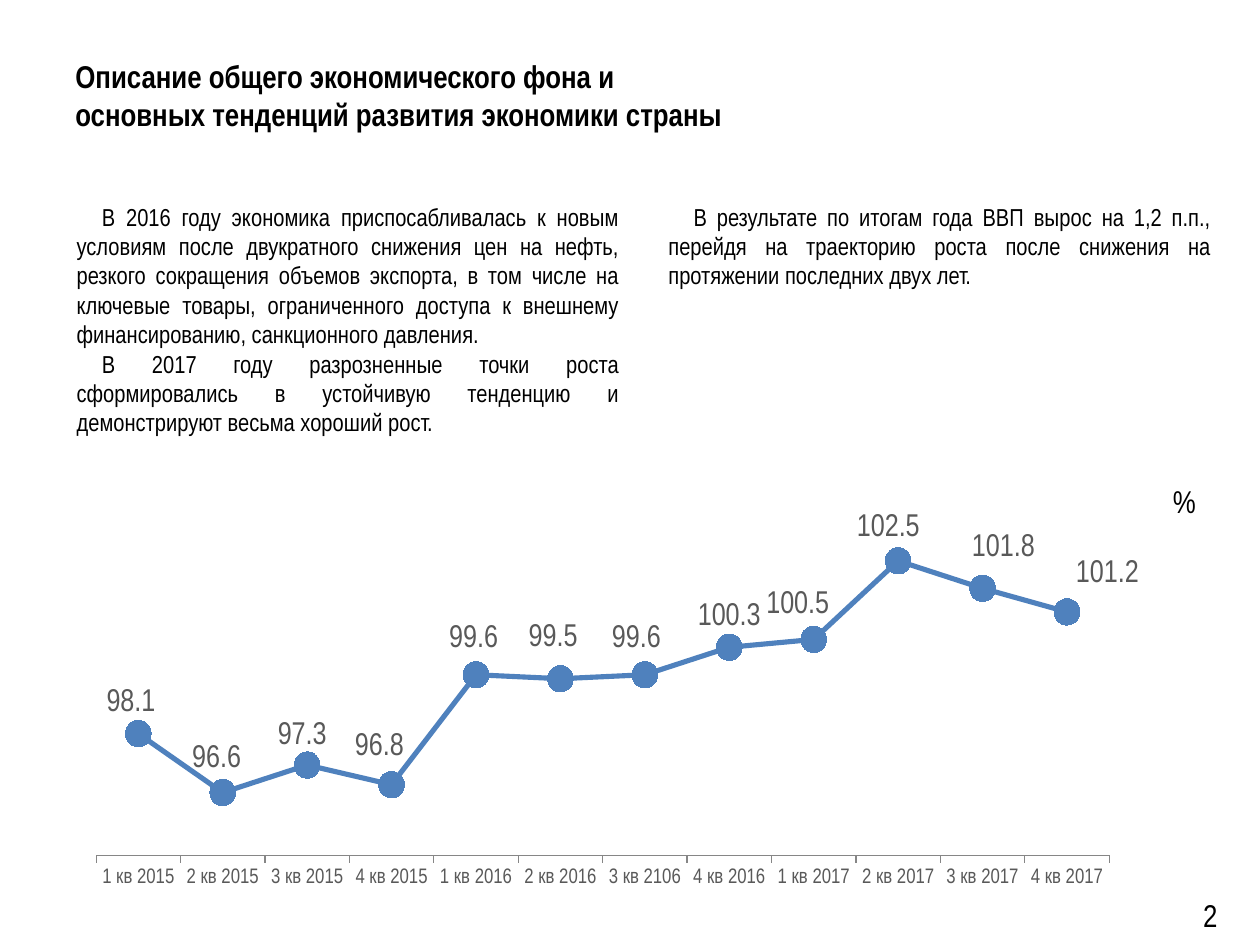
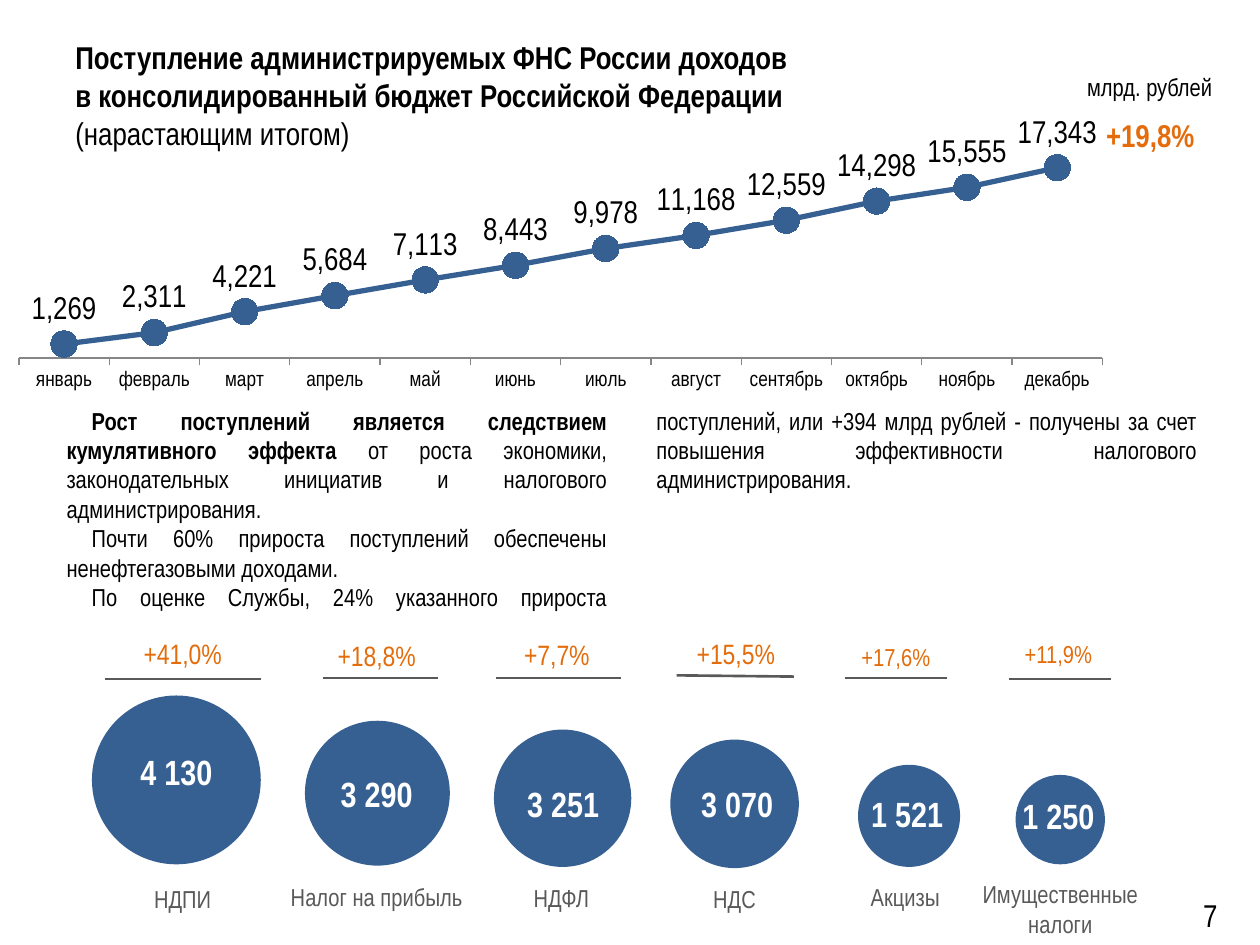
import pptx
import pptx.chart.data
import pptx.dml.color
import pptx.enum.chart
import pptx.enum.shapes
import pptx.enum.text
import pptx.oxml
import pptx.oxml.ns
import pptx.util
from lxml import etree

COLORS = {
    "ink": "000000",
    "paper": "FFFFFF",
    "muted": "595959",
    "axis": "868686",
    "sky": "4F81BD",
    "navy": "376092",
    "growth": "E46C0A",
}
ALIGN = pptx.enum.text.PP_ALIGN
ANCHOR = pptx.enum.text.MSO_ANCHOR
CHART = pptx.enum.chart
qn = pptx.oxml.ns.qn


def px(length):
    return pptx.util.Emu(round(length * 9144))


def rgb(name):
    return pptx.dml.color.RGBColor.from_string(COLORS[name])


def format_font(font, size, color, bold=False):
    font.name = Deck.font
    font.size = pptx.util.Pt(size)
    font.bold = bold
    font.color.rgb = rgb(color)


def write_text(frame, text, size=18, color="ink", bold=False, align=ALIGN.LEFT,
               indent=0, spacing=None):
    paragraphs = [text] if isinstance(text, str) else text
    for index, content in enumerate(paragraphs):
        paragraph = frame.paragraphs[0] if index == 0 else frame.add_paragraph()
        paragraph.alignment = align
        if spacing:
            paragraph.line_spacing = pptx.util.Pt(spacing)
        if indent:
            paragraph._p.get_or_add_pPr().set("indent", str(px(indent)))
        pieces = [(content, bold)] if isinstance(content, str) else content
        for words, weight in pieces:
            run = paragraph.add_run()
            run.text = words
            format_font(run.font, size, color, weight)


def manual_layout(**values):
    layout = etree.Element(qn("c:layout"))
    manual = etree.SubElement(layout, qn("c:manualLayout"))
    for tag, value in values.items():
        etree.SubElement(manual, qn("c:" + tag)).set("val", str(value))
    return layout


class Deck:
    font = "Arial Narrow"

    def __init__(self):
        self.presentation = pptx.Presentation()
        self.presentation.slide_width = px(1000)
        self.presentation.slide_height = px(750)
        self.slide = None

    def new_slide(self, title, number):
        self.slide = self.presentation.slides.add_slide(
            self.presentation.slide_layouts[6])
        self.text(title, 50, 13, 900, 125, anchor=ANCHOR.MIDDLE, bold=True)
        self.text(number, 921, 682, 79, 76, anchor=ANCHOR.MIDDLE,
                  align=ALIGN.CENTER, spacing=30)

    def text(self, text, left, top, width, height, anchor=ANCHOR.TOP, wrap=True,
             grow=False, columns=1, **text_format):
        box = self.slide.shapes.add_textbox(px(left), px(top), px(width), px(height))
        frame = box.text_frame
        frame.word_wrap = wrap
        frame.vertical_anchor = anchor
        if grow:
            frame.auto_size = pptx.enum.text.MSO_AUTO_SIZE.SHAPE_TO_FIT_TEXT
        if columns > 1:
            body = frame._txBody.bodyPr
            body.set("numCol", str(columns))
            body.set("spcCol", str(px(39)))
        write_text(frame, text, **text_format)

    def label(self, text, left, top, width, height=34, **text_format):
        self.text(text, left, top, width, height, wrap=False, grow=True, **text_format)

    def columns(self, paragraphs, left, top, width, height):
        self.text(paragraphs, left, top, width, height, grow=True, columns=2,
                  size=14, align=ALIGN.JUSTIFY, indent=20)

    def circle(self, left, top, diameter):
        circle = self.slide.shapes.add_shape(
            pptx.enum.shapes.MSO_SHAPE.OVAL,
            px(left), px(top), px(diameter), px(diameter))
        circle.shadow.inherit = False
        circle.fill.solid()
        circle.fill.fore_color.rgb = rgb("navy")
        circle.line.fill.background()

    def rule(self, x1, y1, x2, y2):
        rule = self.slide.shapes.add_connector(
            pptx.enum.shapes.MSO_CONNECTOR.STRAIGHT, px(x1), px(y1), px(x2), px(y2))
        rule.line.color.rgb = rgb("muted")
        rule.line.width = pptx.util.Pt(1.5)
        etree.SubElement(rule._element.spPr, qn("a:effectLst"))

    def line_chart(self, kind, series_values, left, top, width, height, plot, scale,
                   color, text_color, number_format, nudges=()):
        data = pptx.chart.data.CategoryChartData(number_format=number_format)
        data.categories = list(series_values)
        data.add_series("Series 1", list(series_values.values()))
        chart = self.slide.shapes.add_chart(
            kind, px(left), px(top), px(width), px(height), data).chart
        chart.has_legend = False
        chart.has_title = False
        format_font(chart.font, 18, text_color)
        chart.plots[0].vary_by_categories = False

        periods = chart.category_axis
        periods.major_tick_mark = CHART.XL_TICK_MARK.OUTSIDE
        periods.format.line.color.rgb = rgb("axis")
        format_font(periods.tick_labels.font, 12, text_color)
        amounts = chart.value_axis
        amounts.visible = False
        amounts.has_major_gridlines = False
        amounts.minimum_scale, amounts.maximum_scale = scale

        series = chart.plots[0].series[0]
        series.smooth = False
        series.format.line.color.rgb = rgb(color)
        series.format.line.width = pptx.util.Pt(3)
        series.marker.style = CHART.XL_MARKER_STYLE.CIRCLE
        series.marker.size = 15
        series.marker.format.fill.solid()
        series.marker.format.fill.fore_color.rgb = rgb(color)
        series.marker.format.line.color.rgb = rgb("paper")

        labels = series.data_labels
        labels.show_value = True
        labels.position = CHART.XL_LABEL_POSITION.ABOVE
        labels.number_format = number_format
        labels.number_format_is_linked = False
        format_font(labels.font, 18, text_color)
        for index in range(len(nudges)):
            point_label = series.points[index].data_label
            format_font(point_label.font, 18, text_color)
            point_label.position = CHART.XL_LABEL_POSITION.ABOVE
        for label, (dx, dy) in zip(chart.element.iter(qn("c:dLbl")), nudges):
            label.insert(1, manual_layout(x=dx / width, y=dy / height))
        for leader in chart.element.iter(qn("c:showLeaderLines")):
            leader.set("val", "0")

        area = next(chart.element.iter(qn("c:plotArea")))
        for layout in area.findall(qn("c:layout")):
            area.remove(layout)
        x, y, w, h = plot
        area.insert(0, manual_layout(layoutTarget="inner", xMode="edge", yMode="edge",
                                     x=x / width, y=y / height,
                                     w=w / width, h=h / height))

    def tax(self, name, caption_box, value, value_center, circle, growth,
            growth_center, growth_top, growth_size, rule):
        self.circle(*circle)
        x, y = value_center
        self.text(value, x - 49, y - 49, 98, 98, anchor=ANCHOR.MIDDLE, wrap=False,
                  size=20, color="paper", bold=True, align=ALIGN.CENTER)
        self.label(name, *caption_box, size=14, color="muted", align=ALIGN.CENTER)
        self.label(growth, growth_center - 50, growth_top, 100, size=growth_size,
                   color="growth", align=ALIGN.CENTER)
        self.rule(*rule)


def economy_slide(deck):
    deck.new_slide(["Описание общего экономического фона и",
                    "основных тенденций развития экономики страны"], "2")
    gdp = {
        "1 кв 2015": 98.1, "2 кв 2015": 96.6, "3 кв 2015": 97.3, "4 кв 2015": 96.8,
        "1 кв 2016": 99.6, "2 кв 2016": 99.5, "3 кв 2106": 99.6, "4 кв 2016": 100.3,
        "1 кв 2017": 100.5, "2 кв 2017": 102.5, "3 кв 2017": 101.8, "4 кв 2017": 101.2,
    }
    nudges = [(-6, 2), (-5, 0), (-4, 3), (-10, -4), (-2, -2), (-6, -6),
              (-7, -2), (0, 2), (-13, -1), (-8, 0), (17, -6), (33, -4)]
    deck.line_chart(CHART.XL_CHART_TYPE.LINE_MARKERS, gdp, 51, 367, 853, 370,
                    plot=(26, 47, 826, 265), scale=(95, 103.5), color="sky",
                    text_color="muted", number_format="0.0", nudges=nudges)
    deck.columns([
        "В 2016 году экономика приспосабливалась к новым условиям после двукратного "
        "снижения цен на нефть, резкого сокращения объемов экспорта, в том числе на "
        "ключевые товары, ограниченного доступа к внешнему финансированию, "
        "санкционного давления.",
        "В 2017 году разрозненные точки роста сформировались в устойчивую тенденцию "
        "и демонстрируют весьма хороший рост.",
        "В результате по итогам года ВВП вырос на 1,2 п.п., перейдя на траекторию "
        "роста после снижения на протяжении последних двух лет.",
    ], 51, 155, 920, 199)
    deck.text("%", 921, 378, 44, 40, grow=True)


def revenue_slide(deck):
    deck.new_slide(["Поступление администрируемых ФНС России доходов",
                    "в консолидированный бюджет Российской Федерации",
                    [("(нарастающим итогом)", False)]], "7")
    revenue = {
        "январь": 1269, "февраль": 2311, "март": 4221, "апрель": 5684,
        "май": 7113, "июнь": 8443, "июль": 9978, "август": 11168,
        "сентябрь": 12559, "октябрь": 14298, "ноябрь": 15555, "декабрь": 17343,
    }
    deck.line_chart(CHART.XL_CHART_TYPE.LINE_MARKERS_STACKED, revenue, 0, 87, 890, 228,
                    plot=(15, 23, 860, 176), scale=(-200, 20000), color="navy",
                    text_color="ink", number_format="#,##0")

    taxes = [
        ("НДПИ", (112, 697, 66), "4 130", (140, 612), (73, 552, 134),
         "+41,0%", 145, 500, 16, (83, 539, 207, 539)),
        ("Налог на прибыль", (220, 695, 158), "3 290", (299, 630), (242, 572, 115),
         "+18,8%", 299, 502, 16, (256, 538, 348, 538)),
        ("НДФЛ", (413, 696, 65), "3 251", (447, 638), (392, 579, 109),
         "+7,7%", 442, 501, 16, (394, 538, 493, 538)),
        ("НДС", (556, 697, 54), "3 070", (585, 638), (532, 587, 102),
         "+15,5%", 584, 500, 16, (537, 536, 630, 537)),
        ("Акцизы", (681, 695, 75), "1 521", (720, 646), (681, 607, 81),
         "+17,6%", 711, 505, 14, (671, 538, 752, 538)),
        (["Имущественные", "налоги"], (769, 693, 145, 57), "1 250", (840, 647),
         (806, 615, 71), "+11,9%", 840, 502, 14, (801, 539, 882, 539)),
    ]
    for tax in taxes:
        deck.tax(*tax)

    deck.label("млрд. рублей", 853, 52, 122, size=14)
    deck.label("+19,8%", 868, 87, 91, 40, color="growth", bold=True)
    deck.columns([
        [("Рост поступлений является следствием кумулятивного эффекта", True),
         (" от роста экономики, законодательных инициатив и налогового "
          "администрирования.", False)],
        "Почти 60% прироста поступлений обеспечены ненефтегазовыми доходами.",
        "По оценке Службы, 24% указанного прироста поступлений, или +394 млрд рублей "
        "- получены за счет повышения эффективности налогового администрирования.",
    ], 43, 317, 917, 175)


def main():
    deck = Deck()
    economy_slide(deck)
    revenue_slide(deck)
    deck.presentation.save("out.pptx")


if __name__ == "__main__":
    main()
